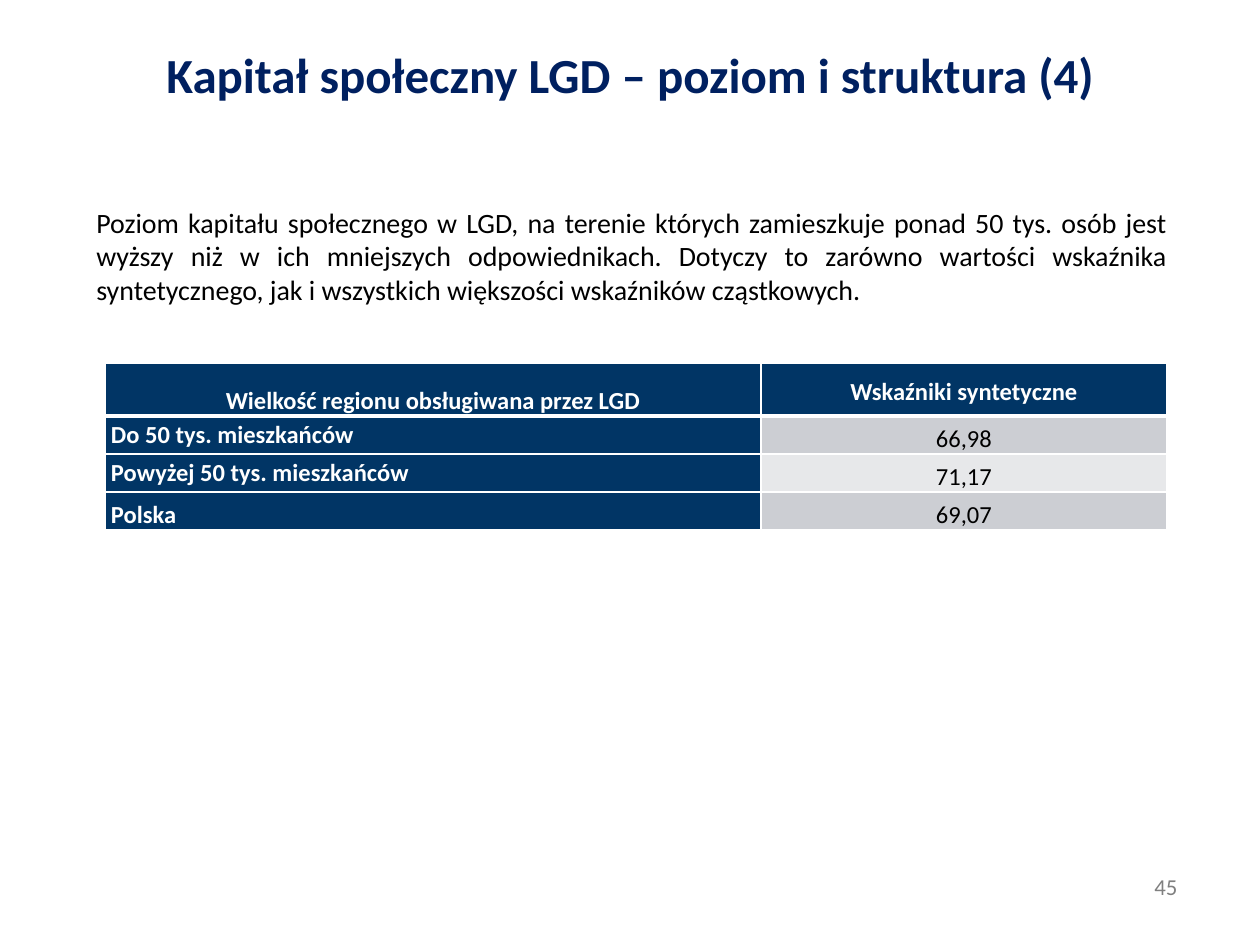
import pptx
import pptx.util
import pptx.dml.color
import pptx.enum.text
import pptx.oxml
import pptx.oxml.ns

PX = 914400 // 126
ALIGN = pptx.enum.text.PP_ALIGN
ANCHOR = pptx.enum.text.MSO_ANCHOR

THEME = {
    "font": "Calibri",
    "navy": "002060", "head": "013565", "white": "FFFFFF", "black": "000000",
    "grey": "808080", "bands": ("CCCED3", "E7E8EA"),
    "title": 28, "body": 16, "cell": 14, "page": 13,
}


def px(num):
    return pptx.util.Emu(num * PX)


def color(name):
    return pptx.dml.color.RGBColor.from_string(THEME.get(name, name))


def assign(item, values):
    for key, value in values.items():
        setattr(item, key, value)


def write(frame, text, size, tint, align, bold=False, space=None):
    par = frame.paragraphs[0]
    assign(par, {"alignment": align, "line_spacing": space})
    run = par.add_run()
    run.text = text
    assign(run.font, {"name": THEME["font"], "bold": bold,
                      "size": pptx.util.Pt(THEME[size])})
    run.font.color.rgb = color(tint)


def add_text(slide, box, text, size, tint, align, bold=False):
    frame = slide.shapes.add_textbox(*map(px, box)).text_frame
    assign(frame, {"word_wrap": True, "vertical_anchor": ANCHOR.TOP})
    write(frame, text, size, tint, align, bold)


def add_edges(cell, widths):
    props = cell._tc.get_or_add_tcPr()
    for side, width in zip("LRTB", widths):
        props.append(pptx.oxml.parse_xml(
            f'<a:ln{side} {pptx.oxml.ns.nsdecls("a")} w="{pptx.util.Pt(width)}">'
            f'<a:solidFill><a:srgbClr val="{THEME["white"]}"/></a:solidFill>'
            f'</a:ln{side}>'))


def add_grid(slide, box, cols, heights, rows, anchors):
    table = slide.shapes.add_table(len(rows), len(cols), *map(px, box)).table
    for col, width in zip(table.columns, cols):
        col.width = px(width)
    for row, height in zip(table.rows, heights):
        row.height = px(height)
    for r, texts in enumerate(rows):
        for c, text in enumerate(texts):
            cell = table.cell(r, c)
            label = r == 0 or c == 0
            # Thick rule between the header and the values
            add_edges(cell, (1, 1, 3 if r == 1 else 1, 3 if r == 0 else 1))
            cell.fill.solid()
            cell.fill.fore_color.rgb = color(
                "head" if label else THEME["bands"][(r - 1) % 2])
            assign(cell, {"margin_left": px(6), "margin_right": px(6),
                          "margin_top": 0, "margin_bottom": 0,
                          "vertical_anchor": anchors[r][c]})
            write(cell.text_frame, text, "cell", "white" if label else "black",
                  ALIGN.LEFT if r and c == 0 else ALIGN.CENTER, label, 1.15)


def build(slide):
    # Page number
    add_text(slide, (1116, 867, 100, 40), "45", "page", "grey", ALIGN.CENTER)

    # Finding
    add_text(slide, (84, 199, 1096, 115),
             "Poziom kapitału społecznego w LGD, na terenie których zamieszkuje "
             "ponad 50 tys. osób jest wyższy niż w ich mniejszych odpowiednikach. "
             "Dotyczy to zarówno wartości wskaźnika syntetycznego, jak i "
             "wszystkich większości wskaźników cząstkowych.",
             "body", "black", ALIGN.JUSTIFY)

    # Indicators by region size
    top, mid, low = ANCHOR.TOP, ANCHOR.MIDDLE, ANCHOR.BOTTOM
    add_grid(slide, (105, 363, 1062, 167), (656, 406), (53, 38, 38, 38),
             (("Wielkość regionu obsługiwana przez LGD", "Wskaźniki syntetyczne"),
              ("Do 50 tys. mieszkańców", "66,98"),
              ("Powyżej 50 tys. mieszkańców", "71,17"),
              ("Polska", "69,07")),
             ((low, mid), (top, low), (top, low), (low, low)))

    # Title
    add_text(slide, (63, 38, 1134, 117),
             "Kapitał społeczny LGD – poziom i struktura (4)",
             "title", "navy", ALIGN.CENTER, True)


def main():
    deck = pptx.Presentation()
    assign(deck, {"slide_width": px(1260), "slide_height": px(945)})
    build(deck.slides.add_slide(deck.slide_layouts[6]))
    deck.save("out.pptx")


if __name__ == "__main__":
    main()
